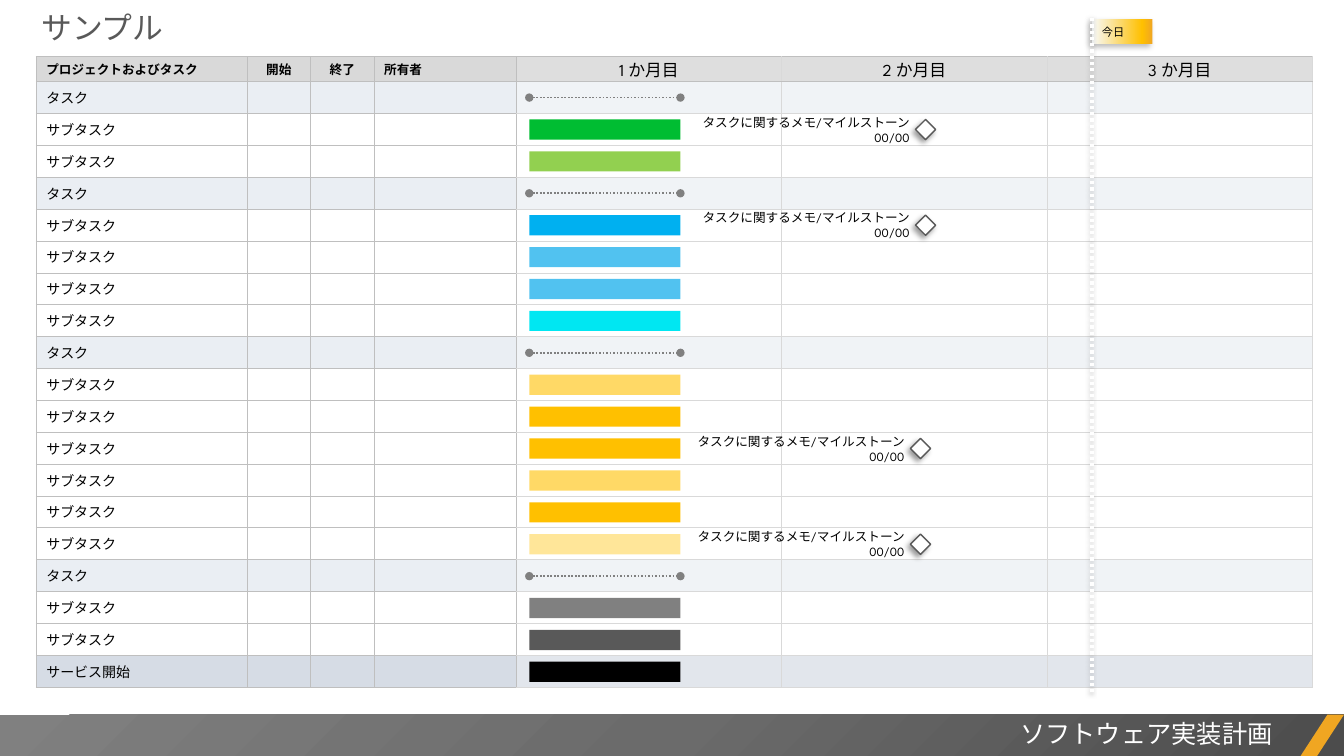
"""Build a one-slide Gantt plan for a software rollout."""
import dataclasses
import pptx
import pptx.dml.color
import pptx.enum.dml
import pptx.enum.lang
import pptx.enum.shapes
import pptx.enum.text
import pptx.oxml
import pptx.oxml.ns
import pptx.util


@dataclasses.dataclass(frozen=True)
class Theme:
    face: str = "League Spartan"
    black: str = "000000"
    white: str = "FFFFFF"
    dark: str = "595959"
    gray: str = "808080"
    rule: str = "BFBFBF"
    pale: str = "D9D9D9"
    task: str = "EAEEF3"
    live: str = "D6DCE5"
    gold: str = "FFC000"
    sand: str = "FFD966"
    cream: str = "FFE699"
    amber: str = "F0A622"
    green: str = "00BD32"
    lime: str = "92D050"
    blue: str = "00B0F0"
    sky: str = "51C2F0"
    cyan: str = "00E7F2"
    head: float = 22
    foot: float = 18
    month: float = 12
    body: float = 10
    note: float = 9
    flag: float = 8


look = Theme()
rgb = pptx.dml.color.RGBColor.from_string
xml = pptx.oxml.parse_xml
space = pptx.oxml.ns.nsdecls("a")
form = pptx.enum.shapes.MSO_SHAPE
side = pptx.enum.text.PP_ALIGN
hold = pptx.enum.text.MSO_ANCHOR
deck = pptx.Presentation()
deck.slide_width = pptx.util.Inches(13.33)
deck.slide_height = pptx.util.Inches(7.5)


def at(x, y, w, h):
    """Turn percentages of the slide into lengths."""
    wide, high = deck.slide_width / 100, deck.slide_height / 100
    return [round(n) for n in (x * wide, y * high, w * wide, h * high)]


def say(frame, text, size, tone=look.black, align=side.LEFT, bold=False):
    """Add one styled run to a text frame."""
    para = frame.paragraphs[0]
    para.alignment = align
    run = para.add_run()
    run.text = text
    font = run.font
    font.name, font.size, font.bold = look.face, pptx.util.Pt(size), bold
    font.color.rgb = rgb(tone)
    font.language_id = pptx.enum.lang.MSO_LANGUAGE_ID.JAPANESE


slide = deck.slides.add_slide(deck.slide_layouts[5])
title = slide.shapes.title
title.left, title.top, title.width, title.height = at(2.33, 0.53, 49.66, 6.27)
title.text_frame.auto_size = pptx.enum.text.MSO_AUTO_SIZE.NONE
title.text_frame.vertical_anchor = hold.TOP
say(title.text_frame, "サンプル", look.head, look.dark)

left, top, head, step = 2.7, 7.47, 3.33, 4.22
cols = [15.68, 4.73, 4.73, 10.58] + [19.75] * 3
names = ["プロジェクトおよびタスク", "開始", "終了", "所有者"]
names += [f"{n} か月目" for n in (1, 2, 3)]
groups = [
    [look.green, look.lime],
    [look.blue, look.sky, look.sky, look.cyan],
    [look.sand, look.gold, look.gold, look.sand, look.gold, look.cream],
    [look.gray, look.dark],
]
rows = []
for bars in groups:
    rows.append(("タスク", look.task, None))
    rows += [("サブタスク", look.white, bar) for bar in bars]
rows.append(("サービス開始", look.live, look.black))
tops = [top + head + step * n for n in range(len(rows))]

spot = at(left, top, sum(cols), head + step * len(rows))
grid = slide.shapes.add_table(len(rows) + 1, len(cols), *spot).table
grid.first_row = grid.horz_banding = False
for col, wide in zip(grid.columns, cols):
    col.width = at(0, 0, wide, 0)[2]
for r, row in enumerate(grid.rows):
    row.height = at(0, 0, 0, step if r else head)[3]
    for c, cell in enumerate(row.cells):
        month = c > 3
        cell.vertical_anchor = hold.MIDDLE
        cell.margin_top = cell.margin_bottom = 0
        if r == 0:
            mid = side.LEFT if c in (0, 3) else side.CENTER
            size = look.month if month else look.note
            say(cell.text_frame, names[c], size, align=mid, bold=not month)
            tint, alpha = (look.rule, 50) if month else (look.pale, 100)
            if month:
                cell.margin_left = cell.margin_right = 0
        else:
            text, tint, bar = rows[r - 1]
            alpha = 100 if not month else 50 if tint == look.white else 70
            if c == 0:
                say(cell.text_frame, text, look.body)
            else:
                end = cell.text_frame.paragraphs[0]._p.get_or_add_endParaRPr()
                end.set("sz", str(look.body * 100))
        cell.fill.solid()
        cell.fill.fore_color.rgb = rgb(tint)
        props = cell._tc.get_or_add_tcPr()
        if alpha < 100:
            ink = props.find(".//" + pptx.oxml.ns.qn("a:srgbClr"))
            ink.append(xml(f'<a:alpha {space} val="{alpha * 1000}"/>'))
        for n, edge in enumerate("LRTB"):
            firm = not month or (c == 4 and edge == "L")
            firm = firm or (r == 0 and edge in "TB") or (r == 1 and edge == "T")
            tone = look.rule if firm else look.pale
            props.insert(n, xml(
                f'<a:ln{edge} {space} w="6350"><a:solidFill>'
                f'<a:srgbClr val="{tone}"/></a:solidFill></a:ln{edge}>'))

start, span, thick = 39.38, 11.25, 2.67
inset = (step - thick) / 2
notes = [(1, 68.12), (4, 68.12), (11, 67.74), (14, 67.74)]
today = slide.shapes.add_group_shape().shapes
band = ([(0, "4C4C4C"), (50, "6B6B6B"), (100, look.gray)],
        '<a:path path="circle"><a:fillToRect l="100000" t="100000"/></a:path>')
glow = ([(0, "F7FAFD"), (83, look.gold), (100, look.amber)], '<a:lin ang="0"/>')

main = slide.shapes
parts = [
    (main, form.RECTANGLE, (0, 94.53, 100, 5.47), band, None),
    (main, form.PARALLELOGRAM, (96.77, 94.53, 3.23, 5.47), look.amber, None),
    (today, form.RECTANGLE, (81.25, 2.53, 4.5, 3.33), glow, (look.black, 25, 4, 3)),
]
parts += [(main, form.RECTANGLE, (start, y + inset, span, thick), bar, None)
          for y, (text, tint, bar) in zip(tops, rows) if bar]
parts += [(main, form.DIAMOND, (x, tops[n] + inset, 1.5, thick), look.white,
           (look.black, 40, 4, 3)) for n, x in notes]
lines = [(main, (start, y + step / 2, span, 0), look.gray, 1.25, None)
         for y, (text, tint, bar) in zip(tops, rows) if not bar]
lines.append((today, (81.25, 2.4, 0, 89.33), look.white, 2.25, (look.gray, 50, 3, 1)))
shades = []

for host, kind, spot, paint, shade in parts:
    shape = host.add_shape(kind, *at(*spot))
    shape.shadow.inherit = False
    shape.line.fill.background()
    if isinstance(paint, str):
        shape.fill.solid()
        shape.fill.fore_color.rgb = rgb(paint)
    else:
        stops = "".join(f'<a:gs pos="{p * 1000}"><a:srgbClr val="{tone}"/></a:gs>'
                        for p, tone in paint[0])
        geom = shape._element.spPr.find(pptx.oxml.ns.qn("a:prstGeom"))
        geom.addnext(xml(f'<a:gradFill {space}><a:gsLst>{stops}</a:gsLst>'
                         f'{paint[1]}</a:gradFill>'))
    if kind == form.PARALLELOGRAM:
        shape.adjustments[0] = 0.65
    if kind == form.DIAMOND:
        shape.line.color.rgb = rgb(look.dark)
        shape.line.width = pptx.util.Pt(1)
    if host is today:
        shape.text_frame.vertical_anchor = hold.MIDDLE
        say(shape.text_frame, "今日", look.flag)
    shades.append((shape, shade))

for host, spot, tone, thin, shade in lines:
    x, y, w, h = at(*spot)
    line = host.add_connector(pptx.enum.shapes.MSO_CONNECTOR.STRAIGHT, x, y, x + w, y + h)
    line.line.color.rgb = rgb(tone)
    line.line.width = pptx.util.Pt(thin)
    line.line.dash_style = pptx.enum.dml.MSO_LINE.ROUND_DOT
    if host is main:
        for end in ("headEnd", "tailEnd"):
            line.line._get_or_add_ln().append(xml(f'<a:{end} {space} type="oval"/>'))
    line._element.spPr.append(xml(f"<a:effectLst {space}/>"))
    shades.append((line, shade))

for shape, shade in shades:
    if shade:
        tone, alpha, blur, far = shade
        shape._element.spPr.find(pptx.oxml.ns.qn("a:effectLst")).append(xml(
            f'<a:outerShdw {space} blurRad="{blur * 12700}" dist="{far * 12700}" '
            f'dir="8100000" algn="tr" rotWithShape="0"><a:srgbClr val="{tone}">'
            f'<a:alpha val="{alpha * 1000}"/></a:srgbClr></a:outerShdw>'))

texts = [("タスクに関するメモ/マイルストーン 00/00", (x - 17.48, tops[n] + 0.13, 17.78, 4),
          look.note, look.black, hold.MIDDLE) for n, x in notes]
texts.append(("ソフトウェア実装計画", (39.38, 94.4, 56.03, 5.33),
              look.foot, look.white, hold.TOP))
for text, spot, size, tone, anchor in texts:
    frame = main.add_textbox(*at(*spot)).text_frame
    frame.word_wrap = True
    frame.vertical_anchor = anchor
    say(frame, text, size, tone, side.RIGHT)

deck.save("out.pptx")
